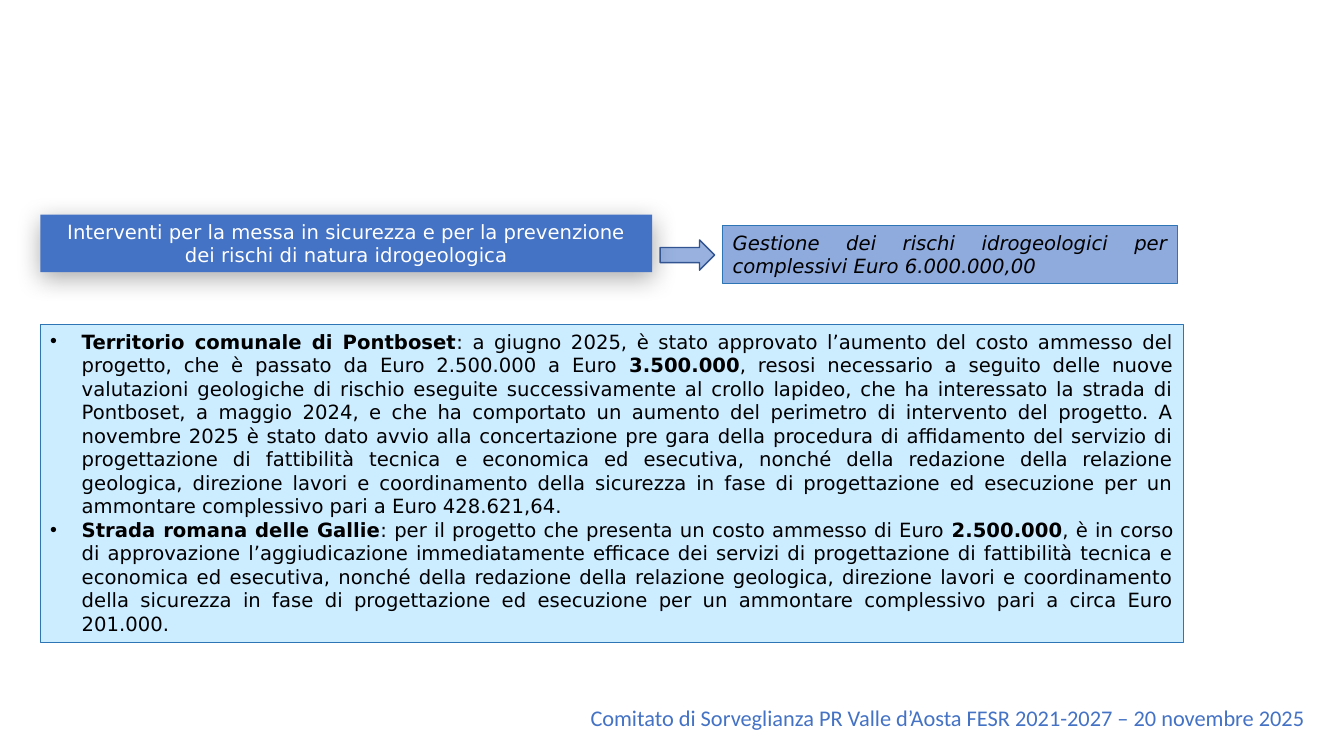
from lxml.etree import SubElement
from pptx import Presentation
from pptx.dml.color import RGBColor
from pptx.enum.shapes import MSO_SHAPE as Shape
from pptx.enum.text import MSO_ANCHOR as Anchor, MSO_AUTO_SIZE as AutoSize, PP_ALIGN as Align
from pptx.oxml.ns import qn
from pptx.util import Pt

BLACK = RGBColor(0x00, 0x00, 0x00)
WHITE = RGBColor(0xFF, 0xFF, 0xFF)
BLUE = RGBColor(0x44, 0x72, 0xC4)
SOFT_BLUE = RGBColor(0x8F, 0xAA, 0xDC)
PALE_BLUE = RGBColor(0xCC, 0xEC, 0xFF)
BORDER_BLUE = RGBColor(0x2E, 0x75, 0xB6)
ARROW_BORDER = RGBColor(0x32, 0x54, 0x91)

LEFT = 28.8
LABEL_HEIGHT = 41
BULLET_INDENT = Pt(22.5)

HEADING = ("Interventi per la messa in sicurezza e per la prevenzione "
           "dei rischi di natura idrogeologica")
BUDGET = "Gestione dei rischi idrogeologici per complessivi Euro 6.000.000,00"
FOOTER = "Comitato di Sorveglianza PR Valle d’Aosta FESR 2021-2027 – 20 novembre 2025"

# Each project alternates bold and regular passages, starting with bold.
PROJECTS = [
    ["Territorio comunale di Pontboset",
     ": a giugno 2025, è stato approvato l’aumento del costo ammesso del progetto, "
     "che è passato da Euro 2.500.000 a Euro ",
     "3.500.000",
     ", resosi necessario a seguito delle nuove valutazioni geologiche di rischio "
     "eseguite successivamente al crollo lapideo, che ha interessato la strada di "
     "Pontboset, a maggio 2024, e che ha comportato un aumento del perimetro di "
     "intervento del progetto. A novembre 2025 è stato dato avvio alla concertazione "
     "pre gara della procedura di affidamento del servizio di progettazione di "
     "fattibilità tecnica e economica ed esecutiva, nonché della redazione della "
     "relazione geologica, direzione lavori e coordinamento della sicurezza in fase di "
     "progettazione ed esecuzione per un ammontare complessivo pari a Euro 428.621,64."],
    ["Strada romana delle Gallie",
     ": per il progetto che presenta un costo ammesso di Euro ",
     "2.500.000",
     ", è in corso di approvazione l’aggiudicazione immediatamente efficace dei servizi "
     "di progettazione di fattibilità tecnica e economica ed esecutiva, nonché della "
     "redazione della relazione geologica, direzione lavori e coordinamento della "
     "sicurezza in fase di progettazione ed esecuzione per un ammontare complessivo "
     "pari a circa Euro 201.000."],
]


def add_box(slide, kind, left, top, width, height, fill, border=None, border_width=0.5):
    box = slide.shapes.add_shape(kind, Pt(left), Pt(top), Pt(width), Pt(height))
    box.shadow.inherit = False
    box.fill.solid()
    box.fill.fore_color.rgb = fill
    if border is None:
        box.line.fill.background()
    else:
        box.line.color.rgb = border
        box.line.width = Pt(border_width)
    return box


def prepare_frame(shape):
    frame = shape.text_frame
    frame.word_wrap = True
    frame.auto_size = AutoSize.SHAPE_TO_FIT_TEXT
    frame.vertical_anchor = Anchor.TOP
    return frame


def write(paragraph, text, *, size=14, font="DejaVu Sans", color=BLACK,
          bold=False, italic=False, align=Align.JUSTIFY):
    paragraph.alignment = align
    run = paragraph.add_run()
    run.text = text
    run.font.size = Pt(size)
    run.font.name = font
    run.font.color.rgb = color
    run.font.bold = bold
    run.font.italic = italic


def add_bullet(paragraph):
    properties = paragraph._p.get_or_add_pPr()
    properties.set("marL", str(BULLET_INDENT))
    properties.set("indent", str(-BULLET_INDENT))
    SubElement(properties, qn("a:buFont"), typeface="Arial")
    SubElement(properties, qn("a:buChar"), char="•")


def set_opacity(shape, percent):
    color = shape.fill._xPr.find(qn("a:solidFill"))[0]
    SubElement(color, qn("a:alpha"), val=str(percent * 1000))


def add_shadow(shape, blur, distance, degrees, percent):
    effects = shape._element.spPr.find(qn("a:effectLst"))
    shadow = SubElement(effects, qn("a:outerShdw"), blurRad=str(Pt(blur)),
                        dist=str(Pt(distance)), dir=str(degrees * 60000), rotWithShape="0")
    color = SubElement(shadow, qn("a:srgbClr"), val=str(BLACK))
    SubElement(color, qn("a:alpha"), val=str(percent * 1000))


def add_projects(slide):
    panel = add_box(slide, Shape.RECTANGLE, LEFT, 231.8, 816.5, 227.5,
                    PALE_BLUE, BORDER_BLUE, 0.75)
    frame = prepare_frame(panel)
    for index, passages in enumerate(PROJECTS):
        paragraph = frame.add_paragraph() if index else frame.paragraphs[0]
        add_bullet(paragraph)
        for position, passage in enumerate(passages):
            write(paragraph, passage, bold=position % 2 == 0)


def main():
    presentation = Presentation()
    presentation.slide_width, presentation.slide_height = Pt(960), Pt(540)
    slide = presentation.slides.add_slide(presentation.slide_layouts.get_by_name("Blank"))

    budget = add_box(slide, Shape.RECTANGLE, 516.2, 161.3, 324.7, LABEL_HEIGHT,
                     SOFT_BLUE, BORDER_BLUE)
    write(prepare_frame(budget).paragraphs[0], BUDGET, italic=True)

    add_projects(slide)

    heading = add_box(slide, Shape.RECTANGLE, LEFT, 153.4, 437, LABEL_HEIGHT, BLUE)
    add_shadow(heading, blur=17.8, distance=4, degrees=87, percent=33)
    write(prepare_frame(heading).paragraphs[0], HEADING, color=WHITE, align=Align.CENTER)

    arrow = add_box(slide, Shape.RIGHT_ARROW, 471.6, 171.4, 38.9, 21.6, BLUE, ARROW_BORDER, 1)
    set_opacity(arrow, 55)

    footer = slide.shapes.add_textbox(Pt(414.7), Pt(499.7), Pt(531.4), Pt(26.6))
    write(prepare_frame(footer).paragraphs[0], FOOTER, size=16, font="Calibri",
          color=BLUE, align=Align.LEFT)

    presentation.save("out.pptx")


if __name__ == "__main__":
    main()
